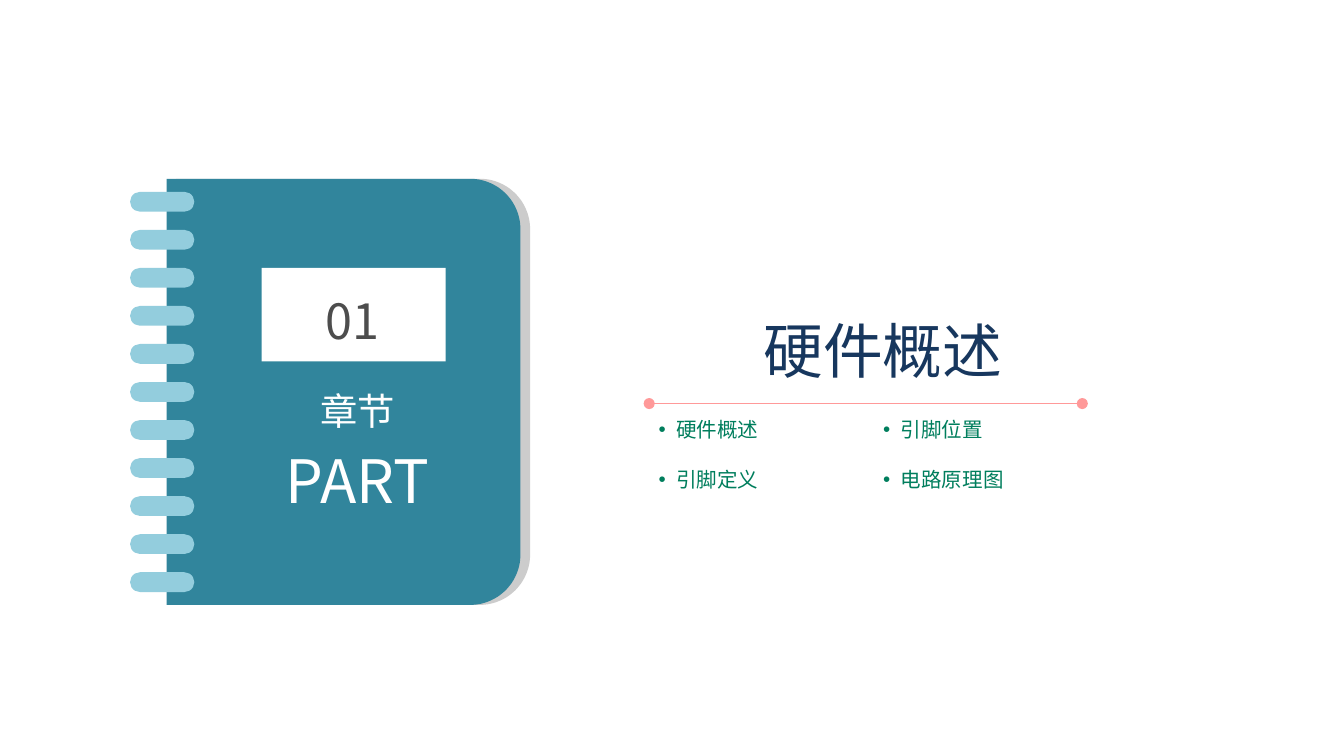
import math

from lxml import etree
from pptx import Presentation
from pptx import util as u
from pptx.dml.color import RGBColor
from pptx.enum import shapes, text
from pptx.oxml import ns

COLORS = {
    "cover": "31859C", "cover_shade": "CCCCCC", "ring": "93CDDD",
    "label": "FFFFFF", "number": "4D4D4D", "title": "17375E",
    "rule": "FF9999", "topic": "007E5D",
}
CJK_FONT = "Noto Sans CJK SC"


def color(name):
    return RGBColor.from_string(COLORS[name])


def add_xml(parent, tag, **attributes):
    return etree.SubElement(parent, ns.qn(tag), attributes)


def paint(shape, fill):
    shape.shadow.inherit = False
    shape.fill.solid()
    shape.fill.fore_color.rgb = color(fill)
    shape.line.fill.background()


def set_values(target, values):
    for name, value in values.items():
        setattr(target, name, value)


def add_text(slide, box, lines, font, size_color, frame_format=None):
    """Place one centred line for each (words, size) pair."""
    shape = slide.shapes.add_textbox(*map(u.Pt, box))
    frame = shape.text_frame
    set_values(frame, {
        "word_wrap": True, "vertical_anchor": text.MSO_ANCHOR.MIDDLE,
        "margin_left": 0, "margin_right": 0, "margin_top": 0, "margin_bottom": 0,
    })
    for index, (words, size) in enumerate(lines):
        paragraph = frame.paragraphs[0] if index == 0 else frame.add_paragraph()
        paragraph.alignment = text.PP_ALIGN.CENTER
        if index:
            paragraph.space_before = u.Pt(6)
        run = paragraph.add_run()
        run.text = words
        set_values(run.font, {"name": font, "size": u.Pt(size)})
        run.font.color.rgb = color(size_color)


def add_cover(slide, box, fill, radius=27):
    """Draw a sheet whose two right corners are round."""
    left, top, width, height = box
    right, bottom = left + width, top + height
    angles = [math.radians(3 * step) for step in range(31)]
    upper = [(right - radius + radius * math.sin(a),
              top + radius - radius * math.cos(a)) for a in angles]
    lower = [(x, top + bottom - y) for x, y in reversed(upper)]
    builder = slide.shapes.build_freeform(u.Pt(left), u.Pt(top))
    builder.add_line_segments(
        [(u.Pt(x), u.Pt(y)) for x, y in upper + lower + [(left, bottom)]])
    paint(builder.convert_to_shape(), fill)


def add_notebook(slide, box):
    left, top, width, height = box

    # Cover and its shade
    cover_left, cover_width = left + 19.5, width - 24.7
    add_cover(slide, (cover_left + 5.2, top, cover_width, height), "cover_shade")
    add_cover(slide, (cover_left, top, cover_width, height), "cover")

    # Number plate
    plate = slide.shapes.add_shape(
        shapes.MSO_SHAPE.RECTANGLE, u.Pt(left + 70.5), u.Pt(top + 47.7),
        u.Pt(98.5), u.Pt(50.2))
    paint(plate, "label")

    # Binding rings
    for index in range(11):
        ring = slide.shapes.add_shape(
            shapes.MSO_SHAPE.ROUNDED_RECTANGLE, u.Pt(left),
            u.Pt(top + 7 + 20.38 * index), u.Pt(34.4), u.Pt(10.6))
        ring.adjustments[0] = 0.5
        paint(ring, "ring")

    # Number and caption
    add_text(slide, (left + 72.8, top + 59.7, 93, 31.7),
             [("01", 26)], CJK_FONT, "number")
    add_text(slide, (left + 77.8, top + 110.8, 88.5, 70.6),
             [("章节", 20), ("PART", 32)], CJK_FONT, "label")


def add_topic(slide, box, words):
    shape = slide.shapes.add_textbox(*map(u.Pt, box))
    frame = shape.text_frame
    set_values(frame, {
        "word_wrap": False, "auto_size": text.MSO_AUTO_SIZE.SHAPE_TO_FIT_TEXT,
        "margin_left": u.Pt(5), "margin_right": u.Pt(5),
        "margin_top": u.Pt(2.6), "margin_bottom": u.Pt(2.6),
    })
    paragraph = frame.paragraphs[0]
    paragraph.level = 1
    properties = paragraph._p.get_or_add_pPr()
    properties.set("marL", str(u.Pt(9.4)))
    properties.set("indent", str(-u.Pt(9.4)))
    add_xml(properties, "a:buFont", typeface="Arial")
    add_xml(properties, "a:buChar", char="•")
    run = paragraph.add_run()
    run.text = words
    set_values(run.font, {"name": "Arial", "size": u.Pt(11)})
    run.font.color.rgb = color("topic")


def add_heading(slide, box, title, topic_rows):
    left, top, width, height = box

    # Rule with round ends
    rule_top = top + 48.4
    rule = slide.shapes.add_connector(
        shapes.MSO_CONNECTOR.STRAIGHT, u.Pt(left), u.Pt(rule_top),
        u.Pt(left + 232), u.Pt(rule_top))
    rule.line.width = u.Pt(1)
    rule.line.color.rgb = color("rule")
    line = rule.line._get_or_add_ln()
    for end in ("a:headEnd", "a:tailEnd"):
        add_xml(line, end, type="oval")
    add_xml(rule._element.spPr, "a:effectLst")

    # Title
    add_text(slide, (left, top, width, 39), [(title, 32)], "Arial", "title")

    # Topics in two columns
    for row, topics in enumerate(topic_rows):
        for column, words in enumerate(topics):
            topic_box = (left + 120.4 * column, top + 53.2 + 26.8 * row,
                         20 + 11 * len(words), 18.5)
            add_topic(slide, topic_box, words)


def main():
    presentation = Presentation()
    presentation.slide_width, presentation.slide_height = u.Pt(720), u.Pt(405)
    slide = presentation.slides.add_slide(presentation.slide_layouts[6])
    add_notebook(slide, (69.7, 95.8, 214.3, 228.3))
    add_heading(slide, (347.8, 167.8, 250.5, 98.5), "硬件概述",
                [("硬件概述", "引脚位置"), ("引脚定义", "电路原理图")])
    presentation.save("out.pptx")


if __name__ == "__main__":
    main()
